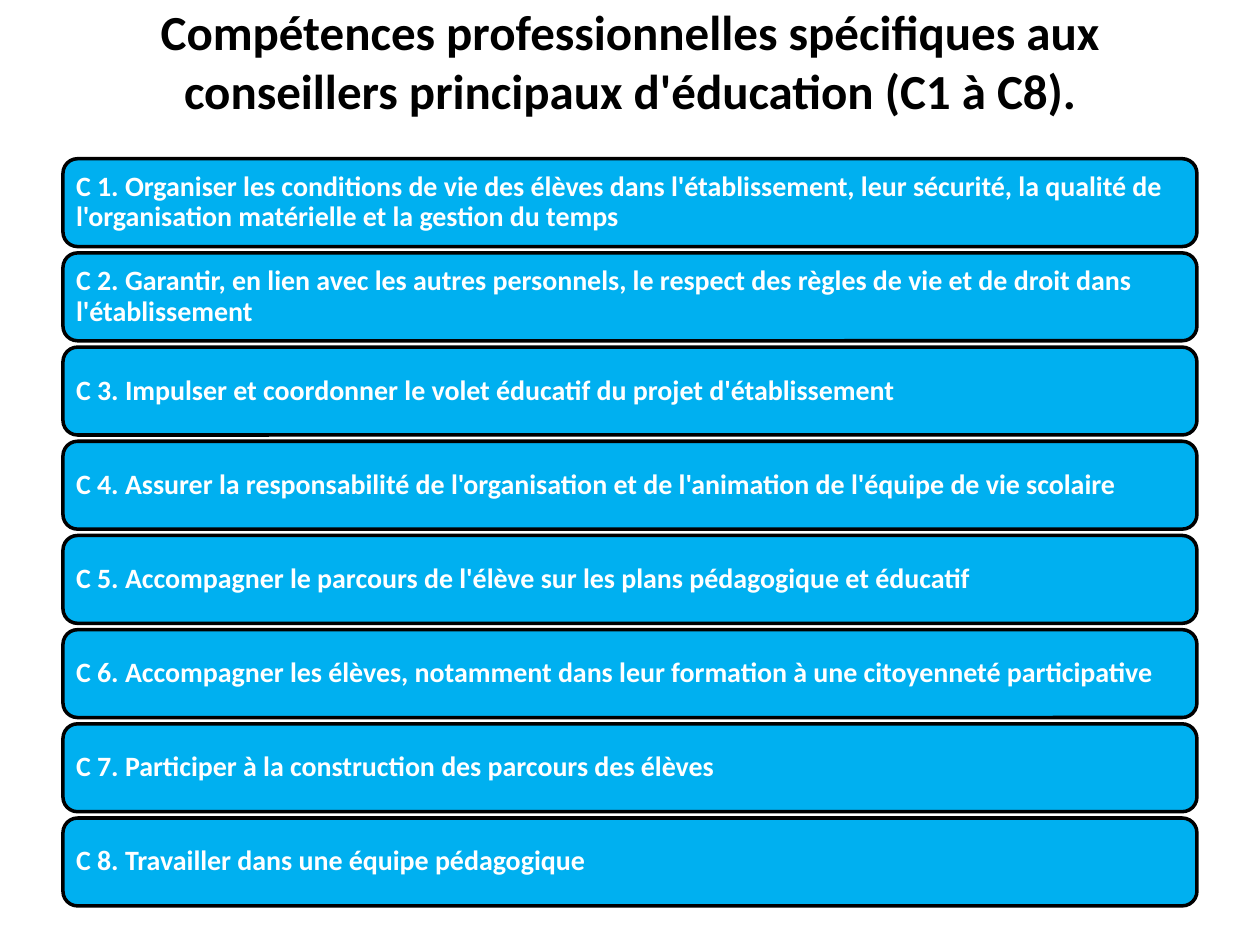
from pptx import Presentation
from pptx.dml.color import RGBColor
from pptx.enum.shapes import MSO_SHAPE
from pptx.enum.text import MSO_ANCHOR, PP_ALIGN
from pptx.util import Inches, Pt

COLORS = {"bar": "00B0F0", "outline": "000000", "title": "000000", "label": "FFFFFF"}
FONT = "Calibri"

TITLE = ("Compétences professionnelles spécifiques aux conseillers "
         "principaux d'éducation (C1 à C8).")
SKILLS = [
    "Organiser les conditions de vie des élèves dans l'établissement, leur sécurité, "
    "la qualité de l'organisation matérielle et la gestion du temps",
    "Garantir, en lien avec les autres personnels, le respect des règles de vie "
    "et de droit dans l'établissement",
    "Impulser et coordonner le volet éducatif du projet d'établissement",
    "Assurer la responsabilité de l'organisation et de l'animation de l'équipe de vie scolaire",
    "Accompagner le parcours de l'élève sur les plans pédagogique et éducatif",
    "Accompagner les élèves, notamment dans leur formation à une citoyenneté participative",
    "Participer à la construction des parcours des élèves",
    "Travailler dans une équipe pédagogique",
]


def write(shape, text, *, size, color, align, insets, line_spacing=1.0):
    """Fill a shape with one bold paragraph; insets are left, top, right, bottom."""
    frame = shape.text_frame
    frame.word_wrap = True
    frame.vertical_anchor = MSO_ANCHOR.MIDDLE
    (frame.margin_left, frame.margin_top,
     frame.margin_right, frame.margin_bottom) = map(Inches, insets)
    paragraph = frame.paragraphs[0]
    paragraph.alignment = align
    paragraph.line_spacing = line_spacing
    run = paragraph.add_run()
    run.text = text
    run.font.name = FONT
    run.font.size = Pt(size)
    run.font.bold = True
    run.font.color.rgb = RGBColor.from_string(COLORS[color])


prs = Presentation()
prs.slide_width, prs.slide_height = Inches(10), Inches(7.5)
slide = prs.slides.add_slide(prs.slide_layouts[6])

# One column of equal bars between the list's top and bottom
left, width = 0.5, 9
list_top, list_bottom, gap = 1.26, 7.19, 0.05
pitch = (list_bottom - list_top + gap) / len(SKILLS)

# The deep bottom inset lifts the heading clear of the list
heading = slide.shapes.add_textbox(Inches(left), Inches(0.21), Inches(width), Inches(1.01))
write(heading, TITLE, size=28, color="title", align=PP_ALIGN.CENTER,
      insets=(0.1, 0.05, 0.1, 0.52))

for row, skill in enumerate(SKILLS):
    bar = slide.shapes.add_shape(
        MSO_SHAPE.ROUNDED_RECTANGLE, Inches(left), Inches(list_top + row * pitch),
        Inches(width), Inches(pitch - gap))
    bar.shadow.inherit = False
    bar.fill.solid()
    bar.fill.fore_color.rgb = RGBColor.from_string(COLORS["bar"])
    bar.line.color.rgb = RGBColor.from_string(COLORS["outline"])
    bar.line.width = Pt(2)
    write(bar, f"C {row + 1}. {skill}", size=16, color="label", align=PP_ALIGN.LEFT,
          insets=(0.07, 0.07, 0.07, 0.07), line_spacing=0.9)

prs.save("out.pptx")
